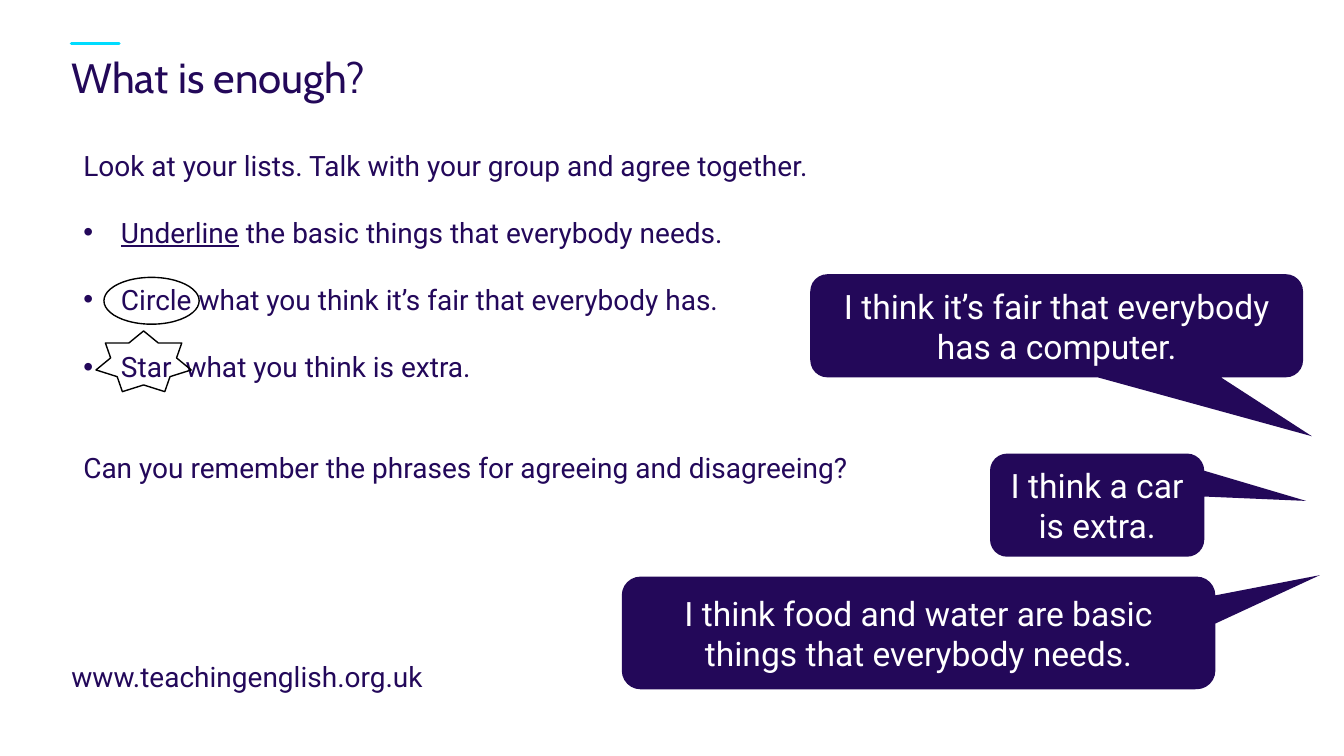
from lxml.etree import SubElement
from pptx import Presentation
from pptx.dml.color import RGBColor
from pptx.enum.shapes import MSO_CONNECTOR, MSO_SHAPE
from pptx.enum.text import MSO_ANCHOR, PP_ALIGN
from pptx.oxml.ns import qn
from pptx.util import Cm, Pt

COLOURS = {"navy": "230859", "text": "23085A", "cyan": "00DCFF", "white": "FFFFFF", "black": "000000"}


def add_text(paragraph, text, size=20, font="Roboto", colour="text", underline=None, spacing=None):
    run = paragraph.add_run()
    run.text = text
    run.font.size = Pt(size)
    run.font.name = font
    run.font.underline = underline
    run.font.color.rgb = RGBColor.from_string(COLOURS[colour])
    if spacing:
        run.font._element.set("spc", str(spacing * 100))


def set_frame(frame, anchor, horizontal=0, vertical=0):
    frame.word_wrap = True
    frame.vertical_anchor = anchor
    frame.margin_left = frame.margin_right = Cm(horizontal)
    frame.margin_top = frame.margin_bottom = Cm(vertical)


presentation = Presentation()
presentation.slide_width = Cm(33.87)
presentation.slide_height = Cm(19.05)
slide = presentation.slides.add_slide(presentation.slide_layouts[5])
shapes = slide.shapes

accent = shapes.add_connector(MSO_CONNECTOR.STRAIGHT, Cm(1.8), Cm(1.1), Cm(3), Cm(1.1))
accent.line.color.rgb = RGBColor.from_string(COLOURS["cyan"])
accent.line.width = Pt(2.4)
accent.line._get_or_add_ln().set("cap", "rnd")
SubElement(accent._element.spPr, qn("a:effectLst"))

title = shapes.title
title.left, title.top, title.width, title.height = Cm(1.8), Cm(1.4), Cm(30.4), Cm(2.2)
set_frame(title.text_frame, MSO_ANCHOR.TOP)
paragraph = title.text_frame.paragraphs[0]
paragraph.alignment = PP_ALIGN.LEFT
paragraph.line_spacing = Pt(33)
add_text(paragraph, "What is enough?", size=30, font="Cabin", colour="navy")

footer = shapes.add_textbox(Cm(1.8), Cm(16.97), Cm(29), Cm(0.5))
set_frame(footer.text_frame, MSO_ANCHOR.BOTTOM)
add_text(footer.text_frame.paragraphs[0], "www.teachingenglish.org.uk")

instructions = shapes.add_textbox(Cm(0.58), Cm(3.6), Cm(23.1), Cm(8.82))
frame = instructions.text_frame
set_frame(frame, MSO_ANCHOR.TOP, 0.25, 0.13)
lines = [
    (0, False, [("Look at your lists. Talk with your group and agree together.", {})]),
    (24, True, [("Underline", {"underline": True}), (" the basic things that everybody needs.", {})]),
    (24, True, [("Circle what you think it’s fair that everybody has.", {})]),
    (24, True, [("Star", {}), (" ", {"spacing": 5}), ("what you think is extra.", {})]),
    (48, False, [("Can you remember the phrases for agreeing and disagreeing?", {})]),
]
for index, (gap, bulleted, runs) in enumerate(lines):
    paragraph = frame.paragraphs[0] if index == 0 else frame.add_paragraph()
    paragraph.line_spacing = Pt(24)
    if gap:
        paragraph.space_before = Pt(gap)
    properties = paragraph._p.get_or_add_pPr()
    properties.set("marL", str(Cm(2.22 if bulleted else 1.27)))
    properties.set("indent", str(Cm(-0.95 if bulleted else 0)))
    if bulleted:
        SubElement(properties, qn("a:buFont")).set("typeface", "Arial")
        SubElement(properties, qn("a:buChar")).set("char", "•")
    for text, style in runs:
        add_text(paragraph, text, **style)

outlines = [
    (MSO_SHAPE.OVAL, 2.62, 6.99, 2.4, 1.18),
    (MSO_SHAPE.STAR_7_POINT, 2.42, 8.34, 2.4, 1.53),
]
for preset, left, top, width, height in outlines:
    outline = shapes.add_shape(preset, Cm(left), Cm(top), Cm(width), Cm(height))
    outline.shadow.inherit = False
    outline.fill.background()
    outline.line.color.rgb = RGBColor.from_string(COLOURS["black"])
    outline.line.width = Pt(1)

callouts = [
    ("I think food and water are basic things that everybody needs.", 15.67, 14.53, 14.96, 2.84, 0.676, -0.513),
    ("I think it’s fair that everybody has a computer.", 20.42, 6.91, 12.42, 2.6, 0.518, 1.071),
    ("I think a car is extra.", 24.95, 11.43, 5.4, 2.6, 0.975, -0.041),
]
for text, left, top, width, height, tip_x, tip_y in callouts:
    callout = shapes.add_shape(
        MSO_SHAPE.ROUNDED_RECTANGULAR_CALLOUT, Cm(left), Cm(top), Cm(width), Cm(height)
    )
    callout.shadow.inherit = False
    callout.adjustments[0] = tip_x
    callout.adjustments[1] = tip_y
    callout.fill.solid()
    callout.fill.fore_color.rgb = RGBColor.from_string(COLOURS["navy"])
    callout.line.fill.background()
    set_frame(callout.text_frame, MSO_ANCHOR.MIDDLE, 0.25, 0.13)
    paragraph = callout.text_frame.paragraphs[0]
    paragraph.alignment = PP_ALIGN.CENTER
    add_text(paragraph, text, size=24, colour="white")

presentation.save("out.pptx")
